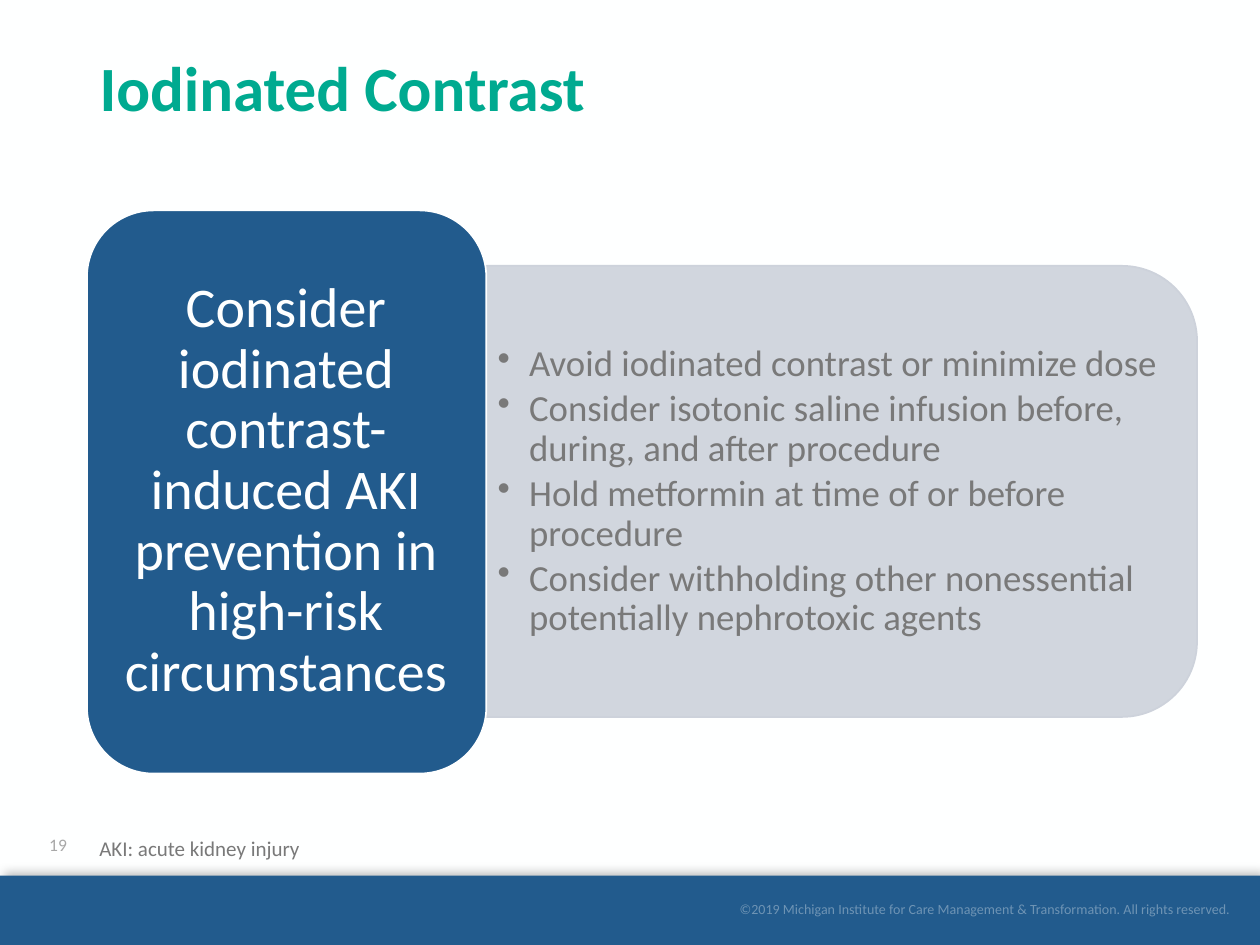
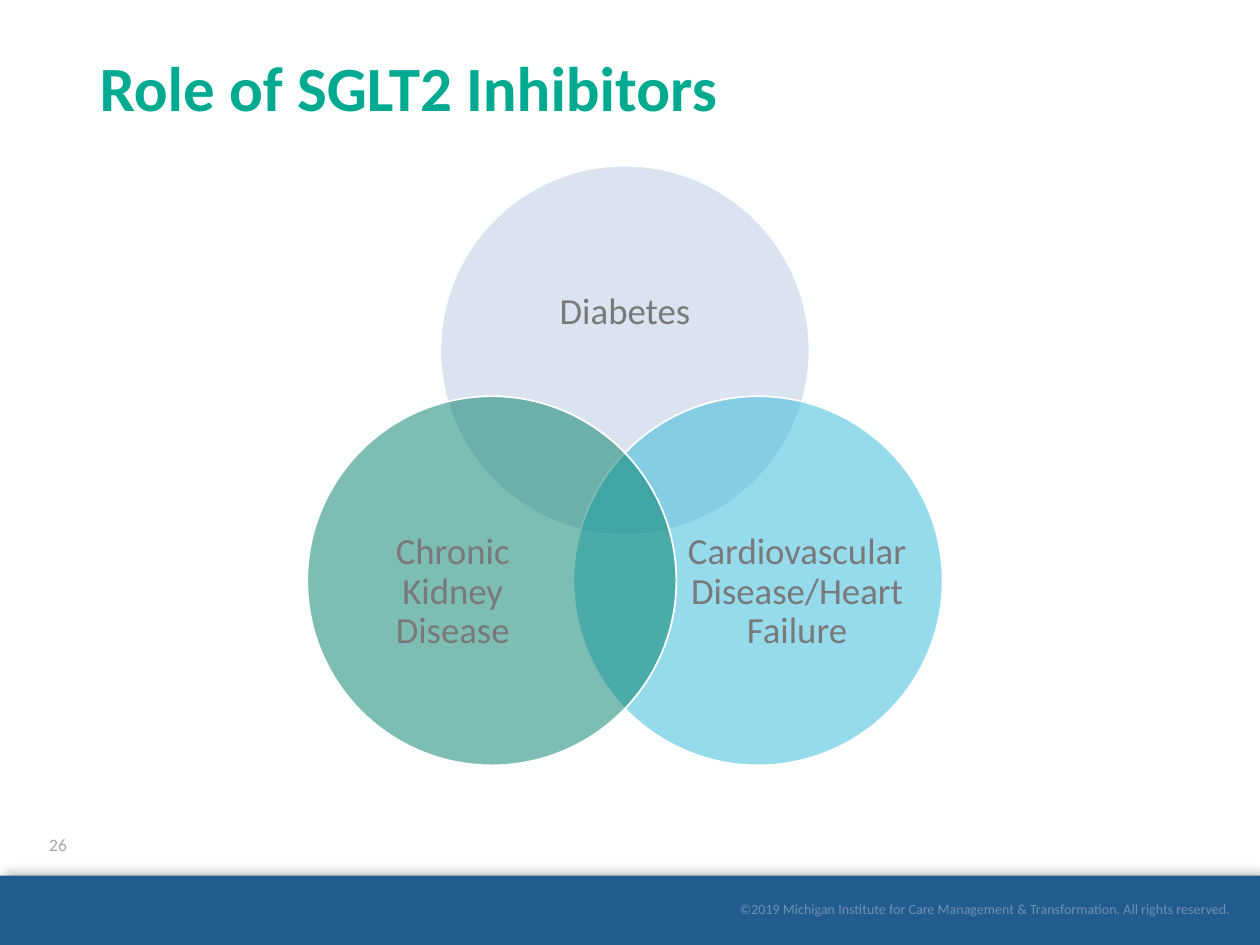
from math import cos, radians, sin

from lxml.etree import SubElement
from pptx import Presentation
from pptx.dml.color import RGBColor
from pptx.enum.shapes import MSO_SHAPE
from pptx.enum.text import MSO_ANCHOR, MSO_AUTO_SIZE, PP_ALIGN
from pptx.oxml.ns import qn
from pptx.util import Inches, Pt

WHITE = RGBColor(0xFE, 0xFF, 0xFF)
BLACK = RGBColor(0, 0, 0)
BLUE = RGBColor(0x22, 0x5B, 0x8D)
GREEN = RGBColor(0x00, 0xAA, 0x90)
GRAY = RGBColor(0x79, 0x79, 0x79)
PALE = RGBColor(0xA8, 0xA8, 0xA8)
SILVER = RGBColor(0xCD, 0xD2, 0xDB)
MIST = RGBColor(0xB7, 0xC9, 0xE1)
SKY = RGBColor(0x2F, 0xB8, 0xDB)
TEAL = RGBColor(0x00, 0x7C, 0x68)
FONT = "Calibri"

RIGHTS = ("©2019 Michigan Institute for Care Management & Transformation. "
          "All rights reserved.")

CONTRAST = {
    "title": "Iodinated Contrast",
    "number": 19,
    "lead": "Consider iodinated contrast-induced AKI prevention "
            "in high-risk circumstances",
    "steps": [
        "Avoid iodinated contrast or minimize dose",
        "Consider isotonic saline infusion before, during, and after procedure",
        "Hold metformin at time of or before procedure",
        "Consider withholding other nonessential potentially nephrotoxic agents",
    ],
    "note": "AKI: acute kidney injury",
}

# Label, colour, angle on the ring, label centre from circle centre, label size
VENN = {
    "title": "Role of SGLT2 Inhibitors",
    "number": 26,
    "circles": [
        ("Diabetes", MIST, -90, (0, -0.3), (2.15, 1.32)),
        ("Cardiovascular Disease/Heart Failure", SKY, 30, (0.31, 0.09), (1.76, 1.61)),
        ("Chronic Kidney Disease", TEAL, 150, (-0.31, 0.09), (1.76, 1.61)),
    ],
}
HUB = (4.96, 4.0)
RING = 1.22
SIZE = 2.93


def fade(color, percent):
    """Set the opacity of a solid fill, line or font colour holder."""
    tag = next(color.iter(qn("a:srgbClr")))
    SubElement(tag, qn("a:alpha"), val=str(percent * 1000))


def add_form(slide, kind, box, fill, line=None, alpha=100):
    form = slide.shapes.add_shape(kind, *map(Inches, box))
    form.shadow.inherit = False
    form.fill.solid()
    form.fill.fore_color.rgb = fill
    if line is None:
        form.line.fill.background()
    else:
        form.line.color.rgb = line
        form.line.width = Pt(1)
    if alpha < 100:
        fade(form._element.spPr, alpha)
    return form


def add_text(slide, box, lines, size, color, align=PP_ALIGN.LEFT,
             anchor=MSO_ANCHOR.MIDDLE, inset=(0, 0, 0, 0), bullet=False, **style):
    """Add a text box; inset is left, top, right, bottom in inches."""
    area = slide.shapes.add_textbox(*map(Inches, box))
    frame = area.text_frame
    frame.word_wrap = True
    frame.vertical_anchor = anchor
    for side, gap in zip(("left", "top", "right", "bottom"), inset):
        setattr(frame, f"margin_{side}", Inches(gap))
    for i, line in enumerate(lines):
        para = frame.add_paragraph() if i else frame.paragraphs[0]
        para.alignment = align
        for name, value in style.items():
            setattr(para, name, value)
        if bullet:
            props = para._p.get_or_add_pPr()
            props.set("marL", str(Inches(0.25)))
            props.set("indent", str(-Inches(0.25)))
            SubElement(props, qn("a:buChar"), char="•")
        run = para.add_run()
        run.text = line
        font = {"name": FONT, "size": Pt(size)}
        for name, value in font.items():
            setattr(run.font, name, value)
        run.font.color.rgb = color
    return area


def add_band(slide):
    band = add_form(slide, MSO_SHAPE.RECTANGLE, (0, 6.95, 10, 0.55), BLUE)
    effects = band._element.spPr.find(qn("a:effectLst"))
    shadow = SubElement(effects, qn("a:outerShdw"), blurRad=str(Pt(6)),
                        dist=str(Pt(3)), dir=str(315 * 60000))
    SubElement(shadow, qn("a:srgbClr"), val=str(BLACK))
    fade(shadow, 25)


def add_page(deck, title, number):
    """Add a slide with the shared title, band, rights line and number."""
    slide = deck.slides.add_slide(deck.slide_layouts[5])
    add_band(slide)
    rights = add_text(slide, (4.95, 7.08, 4.82, 0.27), [RIGHTS], 8, WHITE,
                      PP_ALIGN.RIGHT, inset=(0.1, 0.05, 0, 0.05))
    fade(rights.text_frame._txBody, 35)
    add_text(slide, (0.25, 6.5, 0.42, 0.4), [str(number)], 10, PALE,
             PP_ALIGN.CENTER, inset=(0, 0.05, 0, 0.05))

    head = slide.shapes.title
    place = {"left": 0.69, "top": 0.4, "width": 8.62, "height": 1.45}
    for name, value in place.items():
        setattr(head, name, Inches(value))
    frame = head.text_frame
    frame.text = title
    frame.auto_size = MSO_AUTO_SIZE.NONE
    frame.vertical_anchor = MSO_ANCHOR.TOP
    para = frame.paragraphs[0]
    para.alignment = PP_ALIGN.LEFT
    para.line_spacing = 0.9
    font = para.runs[0].font
    for name, value in {"name": FONT, "size": Pt(36), "bold": True}.items():
        setattr(font, name, value)
    font.color.rgb = GREEN
    return slide


def add_contrast(deck):
    slide = add_page(deck, CONTRAST["title"], CONTRAST["number"])
    panel = add_form(slide, MSO_SHAPE.ROUND_2_SAME_RECTANGLE,
                     (4.89, 1.08, 3.58, 5.64), SILVER, SILVER, 90)
    panel.rotation = 90
    add_text(slide, (3.86, 2.29, 5.47, 3.23), CONTRAST["steps"], 21, GRAY,
             inset=(0.09, 0.04, 0.09, 0.04), bullet=True,
             line_spacing=0.9, space_after=Pt(3))
    add_form(slide, MSO_SHAPE.ROUNDED_RECTANGLE, (0.69, 1.67, 3.17, 4.47),
             BLUE, WHITE)
    add_text(slide, (0.84, 1.82, 2.86, 4.16), [CONTRAST["lead"]], 32, WHITE,
             PP_ALIGN.CENTER, inset=(0.13, 0.07, 0.13, 0.07), line_spacing=0.9)
    add_text(slide, (0.69, 6.58, 6.75, 0.3), [CONTRAST["note"]], 12, GRAY,
             anchor=MSO_ANCHOR.TOP, inset=(0.1, 0.05, 0.1, 0.05))


def add_venn(deck):
    slide = add_page(deck, VENN["title"], VENN["number"])
    for label, color, angle, (dx, dy), (wide, high) in VENN["circles"]:
        x = HUB[0] + RING * cos(radians(angle))
        y = HUB[1] + RING * sin(radians(angle))
        add_form(slide, MSO_SHAPE.OVAL,
                 (x - SIZE / 2, y - SIZE / 2, SIZE, SIZE), color, WHITE, 50)
        add_text(slide, (x + dx - wide / 2, y + dy - high / 2, wide, high),
                 [label], 21, GRAY, PP_ALIGN.CENTER, line_spacing=0.9)


def main():
    deck = Presentation()
    deck.slide_width, deck.slide_height = Inches(10), Inches(7.5)
    paper = deck.slide_master.background.fill
    paper.solid()
    paper.fore_color.rgb = WHITE
    add_contrast(deck)
    add_venn(deck)
    deck.save("out.pptx")


if __name__ == "__main__":
    main()
